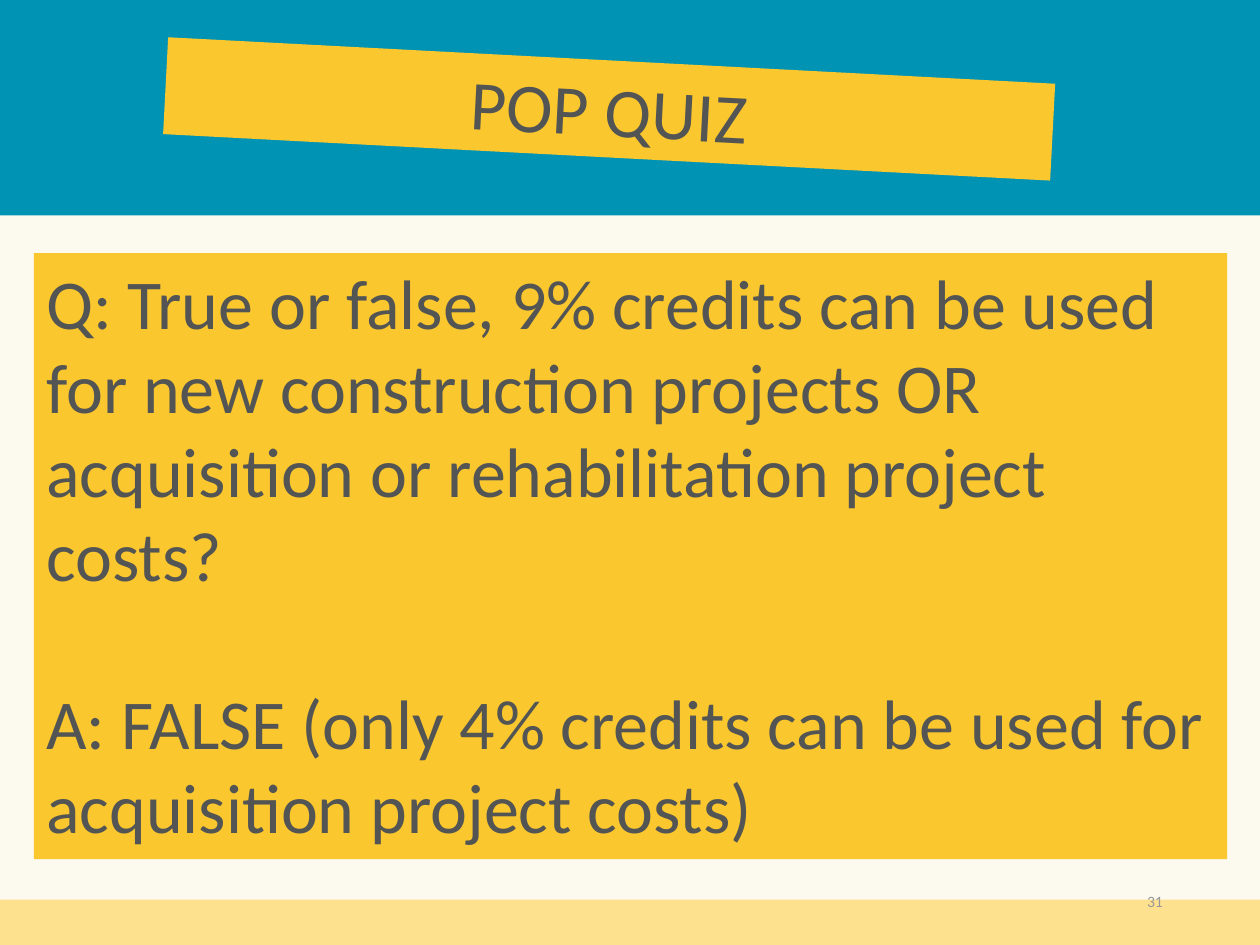
from pptx import Presentation
from pptx.dml.color import RGBColor as RGB
from pptx.enum.shapes import MSO_SHAPE as Kind
from pptx.enum.text import MSO_ANCHOR as Anchor, PP_ALIGN as Align
from pptx.util import Inches, Pt

HUES = {
    "cream": "FCF9EF",
    "sand": "FDE18F",
    "teal": "0193B4",
    "gold": "FBC72E",
    "ink": "535554",
    "gray": "999999",
}
QUIZ = [
    "Q: True or false, 9% credits can be used for new construction projects "
    "OR acquisition or rehabilitation project costs?",
    "A: FALSE (only 4% credits can be used for acquisition project costs)",
]


def paint(fill, hue):
    fill.solid()
    fill.fore_color.rgb = RGB.from_string(HUES[hue])


def add_box(slide, area, hue):
    box = slide.shapes.add_shape(Kind.RECTANGLE, *map(Inches, area))
    box.shadow.inherit = False
    paint(box.fill, hue)
    box.line.fill.background()
    return box


def write(box, lines, size, hue, align, anchor=Anchor.TOP, gap=0):
    frame = box.text_frame
    frame.word_wrap = True
    frame.vertical_anchor = anchor
    frame.text = "\n".join(lines)
    for i, para in enumerate(frame.paragraphs):
        para.alignment = align
        para.space_before = Pt(gap if i else 0)
        para.font.name = "Calibri"
        para.font.size = Pt(size)
        para.font.color.rgb = RGB.from_string(HUES[hue])


def add_number(slide, area, text):
    box = slide.shapes.add_textbox(*map(Inches, area))
    frame = box.text_frame
    frame.margin_left = frame.margin_right = Inches(0.08)
    frame.margin_top = frame.margin_bottom = Inches(0.04)
    write(box, [text], 9, "gray", Align.RIGHT, Anchor.MIDDLE)


def main():
    deck = Presentation()
    deck.slide_width, deck.slide_height = Inches(10), Inches(7.5)
    slide = deck.slides.add_slide(deck.slide_layouts[6])
    paint(slide.background.fill, "cream")

    add_box(slide, (0, 7.14, 10, 0.36), "sand")
    add_box(slide, (0, 0, 10, 1.71), "teal")
    add_number(slide, (7.06, 6.95, 2.25, 0.4), "31")

    body = add_box(slide, (0.27, 2.01, 9.47, 4.81), "gold")
    write(body, QUIZ, 40, "ink", Align.LEFT, gap=48)

    title = add_box(slide, (1.31, 0.48, 7.05, 0.77), "gold")
    title.rotation = 3
    write(title, ["POP QUIZ"], 40, "ink", Align.CENTER)

    deck.save("out.pptx")


if __name__ == "__main__":
    main()
